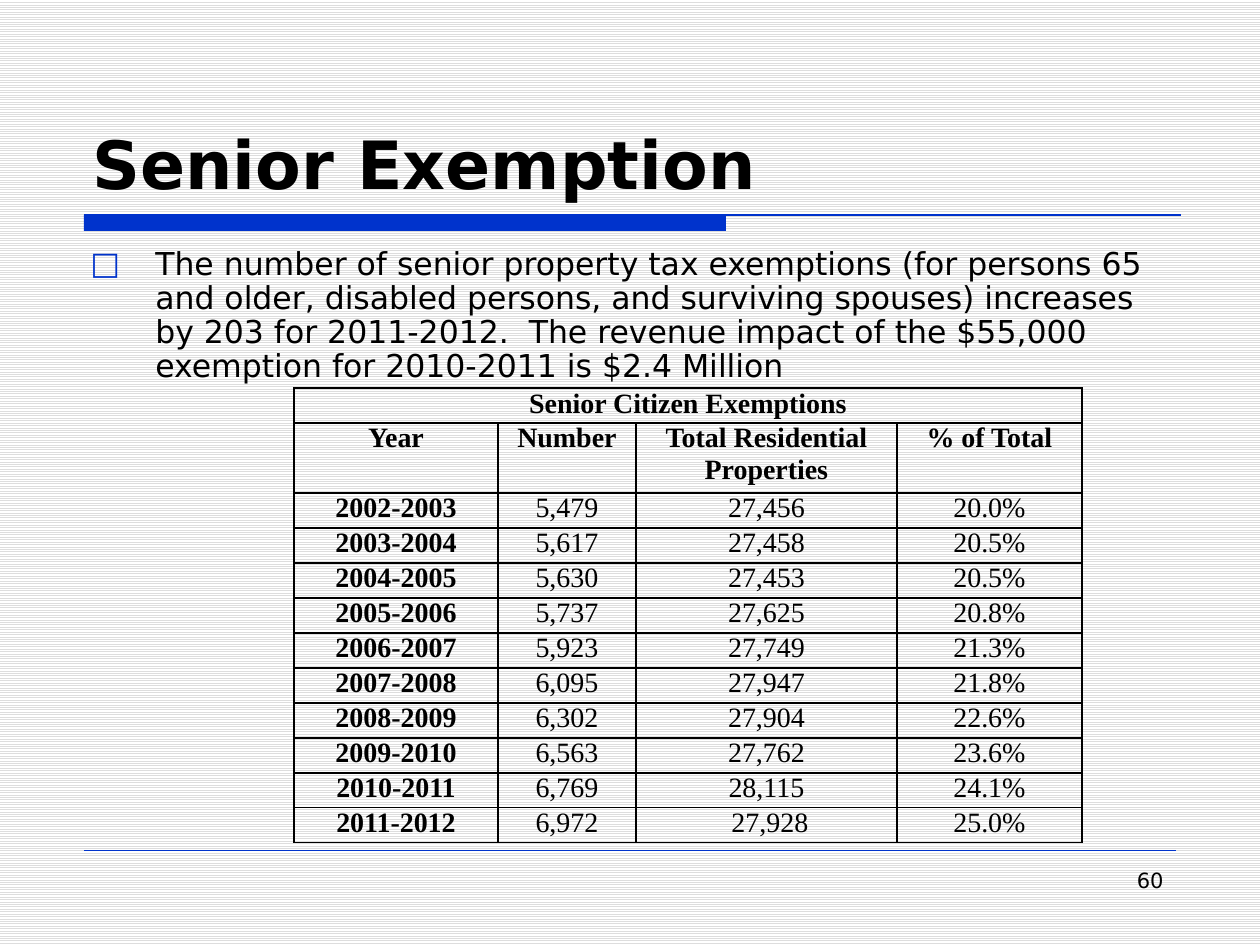
import dataclasses
import typing

import lxml.etree
import pptx
import pptx.dml.color
import pptx.enum.dml
import pptx.enum.shapes
import pptx.enum.text
import pptx.oxml
import pptx.oxml.ns
import pptx.util

PX = 914400 / 126  # EMU per pixel
BLUE, BLACK = "0033CC", "000000"
SANS, SERIF = "DejaVu Sans", "Times New Roman"
ALIGN = pptx.enum.text.PP_ALIGN
ANCHOR = pptx.enum.text.MSO_ANCHOR
qn = pptx.oxml.ns.qn


class Box(typing.NamedTuple):
    left: int
    top: int
    width: int
    height: int


@dataclasses.dataclass
class YearRow:
    year: str
    number: str
    properties: str
    share: str


HEADINGS = ["Year", "Number", "Total Residential Properties", "% of Total"]
COLUMN_WIDTHS = [204, 138, 261, 185]
YEAR_ROWS = [
    YearRow("2002-2003", "5,479", "27,456", "20.0%"),
    YearRow("2003-2004", "5,617", "27,458", "20.5%"),
    YearRow("2004-2005", "5,630", "27,453", "20.5%"),
    YearRow("2005-2006", "5,737", "27,625", "20.8%"),
    YearRow("2006-2007", "5,923", "27,749", "21.3%"),
    YearRow("2007-2008", "6,095", "27,947", "21.8%"),
    YearRow("2008-2009", "6,302", "27,904", "22.6%"),
    YearRow("2009-2010", "6,563", "27,762", "23.6%"),
    YearRow("2010-2011", "6,769", "28,115", "24.1%"),
    YearRow("2011-2012", "6,972", " 27,928", "25.0%"),
]


def emu(pixels: int) -> int:
    return round(pixels * PX)


def color(value: str) -> pptx.dml.color.RGBColor:
    return pptx.dml.color.RGBColor.from_string(value)


def write(frame, text: str, *, size: int, font: str = SANS, bold: bool = False,
          align=ALIGN.LEFT, anchor=ANCHOR.TOP):
    """Put one formatted paragraph in a text frame and return it."""
    frame.word_wrap = True
    frame.vertical_anchor = anchor
    para = frame.paragraphs[0]
    para.alignment = align
    span = para.add_run()
    span.text = text
    span.font.size = pptx.util.Pt(size)
    span.font.name = font
    span.font.bold = bold
    span.font.color.rgb = color(BLACK)
    return para


def add_text(page, box: Box, text: str, **style):
    shape = page.shapes.add_textbox(*map(emu, box))
    return write(shape.text_frame, text, **style)


def add_rule(page, left: int, right: int, y: int, width: float) -> None:
    line = page.shapes.add_connector(
        pptx.enum.shapes.MSO_CONNECTOR.STRAIGHT, emu(left), emu(y), emu(right), emu(y))
    line.line.color.rgb = color(BLUE)
    line.line.width = pptx.util.Pt(width)
    lxml.etree.SubElement(line._element.spPr, qn("a:effectLst"))


def add_bullet(para, mark: str, indent: int) -> None:
    properties = para._p.get_or_add_pPr()
    properties.set("marL", str(emu(indent)))
    properties.set("indent", str(-emu(indent)))
    bullet_color = lxml.etree.SubElement(properties, qn("a:buClr"))
    lxml.etree.SubElement(bullet_color, qn("a:srgbClr"), val=BLUE)
    lxml.etree.SubElement(properties, qn("a:buFont"), typeface=SANS)
    lxml.etree.SubElement(properties, qn("a:buChar"), char=mark)


def fill_cell(cell, text: str, bold: bool) -> None:
    cell.margin_left = cell.margin_right = emu(9)
    cell.margin_top = cell.margin_bottom = 0
    properties = cell._tc.get_or_add_tcPr()
    for side in ("a:lnL", "a:lnR", "a:lnT", "a:lnB"):
        border = lxml.etree.SubElement(properties, qn(side), w=str(pptx.util.Pt(1)))
        solid = lxml.etree.SubElement(border, qn("a:solidFill"))
        lxml.etree.SubElement(solid, qn("a:srgbClr"), val=BLACK)
    cell.fill.background()
    if text:
        write(cell.text_frame, text, size=16, font=SERIF, bold=bold, align=ALIGN.CENTER)


def add_exemption_table(page, left: int, top: int, row_height: int) -> None:
    rows = [["Senior Citizen Exemptions", "", "", ""], HEADINGS]
    rows += [list(dataclasses.astuple(row)) for row in YEAR_ROWS]
    heights = [row_height] * len(rows)
    heights[1] = 2 * row_height
    box = Box(left, top, sum(COLUMN_WIDTHS), sum(heights))
    table = page.shapes.add_table(len(rows), len(HEADINGS), *map(emu, box)).table
    table.first_row = table.horz_banding = False
    table.cell(0, 0).merge(table.cell(0, len(HEADINGS) - 1))
    for column, width in zip(table.columns, COLUMN_WIDTHS):
        column.width = emu(width)
    for i, (texts, height) in enumerate(zip(rows, heights)):
        table.rows[i].height = emu(height)
        for j, text in enumerate(texts):
            fill_cell(table.cell(i, j), text, bold=i < 2 or j == 0)


def main() -> None:
    deck = pptx.Presentation()
    deck.slide_width, deck.slide_height = emu(1260), emu(945)
    page = deck.slides.add_slide(deck.slide_layouts[5])

    # Background of fine horizontal lines
    backdrop = page.background.fill
    backdrop.patterned()
    backdrop.pattern = pptx.enum.dml.MSO_PATTERN.LIGHT_HORIZONTAL
    backdrop.fore_color.rgb = color("DDDDDD")
    backdrop.back_color.rgb = color("FFFFFF")

    # Title with its bar and rule
    title = page.shapes.title
    title.left, title.top, title.width, title.height = map(emu, Box(80, 41, 1102, 168))
    title.text_frame.auto_size = pptx.enum.text.MSO_AUTO_SIZE.NONE
    write(title.text_frame, "Senior Exemption", size=38, bold=True, anchor=ANCHOR.BOTTOM)
    bar = page.shapes.add_shape(
        pptx.enum.shapes.MSO_SHAPE.RECTANGLE, *map(emu, Box(84, 215, 642, 16)))
    bar.shadow.inherit = False
    bar.fill.solid()
    bar.fill.fore_color.rgb = color(BLUE)
    bar.line.fill.background()
    add_rule(page, 84, 1181, 215, 0.75)

    # Summary
    summary = add_text(
        page, Box(78, 242, 1097, 158),
        "The number of senior property tax exemptions (for persons 65 and older, "
        "disabled persons, and surviving spouses) increases by 203 for 2011-2012.  "
        "The revenue impact of the $55,000 exemption for 2010-2011 is $2.4 Million",
        size=18)
    summary.line_spacing = 0.9
    add_bullet(summary, "□", 65)

    add_exemption_table(page, left=294, top=388, row_height=35)

    # Footer rule and page number
    add_rule(page, 84, 1176, 850, 0.25)
    add_text(page, Box(903, 861, 273, 66), "60", size=12, align=ALIGN.RIGHT)

    deck.save("out.pptx")


if __name__ == "__main__":
    main()
